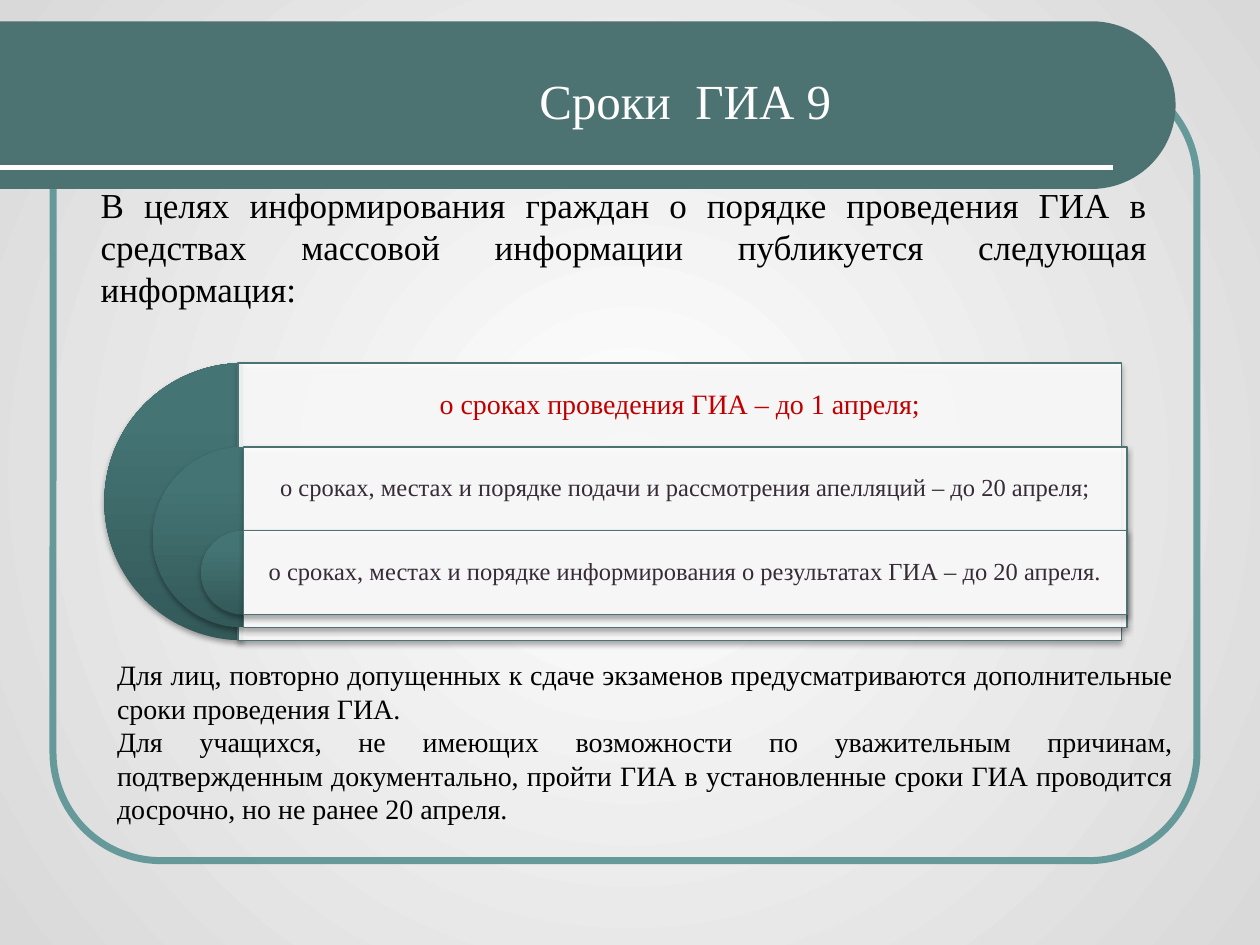
from math import cos, pi, sin

from pptx import Presentation
from pptx.dml.color import RGBColor
from pptx.enum.shapes import MSO_CONNECTOR, MSO_SHAPE
from pptx.enum.text import MSO_ANCHOR, MSO_AUTO_SIZE, PP_ALIGN
from pptx.oxml import parse_xml
from pptx.oxml.ns import nsdecls, qn
from pptx.util import Cm, Pt

CENTER, JUSTIFY, LEFT = PP_ALIGN.CENTER, PP_ALIGN.JUSTIFY, PP_ALIGN.LEFT
TOP, MIDDLE = MSO_ANCHOR.TOP, MSO_ANCHOR.MIDDLE

# Content
TITLE = "Сроки  ГИА 9"
BODY = "."
INTRO = ["В целях информирования граждан о порядке проведения ГИА в "
         "средствах массовой информации публикуется следующая информация:"]
DEADLINES = [  # text, size name, colour name, left edge of the panel in cm
    ("о сроках проведения ГИА – до 1 апреля;", "text", "accent", 4.8),
    ("о сроках, местах и порядке подачи и рассмотрения апелляций – до 20 апреля;",
     "small", "muted", 4.91),
    ("о сроках, местах и порядке информирования о результатах ГИА – до 20 апреля.",
     "small", "muted", 4.91),
]
NOTES = [
    "Для лиц, повторно допущенных к сдаче экзаменов предусматриваются "
    "дополнительные сроки проведения ГИА.",
    "Для учащихся, не имеющих возможности по уважительным причинам, "
    "подтвержденным документально, пройти ГИА в установленные сроки ГИА "
    "проводится досрочно, но не ранее 20 апреля.",
]

THEME = {
    "font": "Times New Roman",
    "sizes": {"title": 28, "intro": 20, "text": 16, "small": 14},
    "colors": {"white": "FFFFFF", "black": "000000", "band": "4C7272",
               "frame": "669999", "accent": "C00000", "muted": "362B36"},
    "background": [(0, "FFFFFF"), (100, "D9D9D9")],
    "pie": [(0, "345959"), (80, "447474"), (100, "447575")],
}


def color(name):
    return RGBColor.from_string(THEME["colors"][name])


def gradient_xml(stops, direction):
    stop_list = "".join(
        f'<a:gs pos="{position * 1000}"><a:srgbClr val="{value}"/></a:gs>'
        for position, value in stops)
    return (f'<a:gradFill {nsdecls("a")} rotWithShape="1">'
            f"<a:gsLst>{stop_list}</a:gsLst>{direction}</a:gradFill>")


def set_effects(shape, effects=""):
    properties = shape.element.spPr
    for old in properties.findall(qn("a:effectLst")):
        properties.remove(old)
    properties.append(parse_xml(
        f'<a:effectLst {nsdecls("a")}>{effects}</a:effectLst>'))


def add_soft_shadow(shape):
    set_effects(shape, '<a:outerShdw blurRad="39400" dist="22900" dir="5400000" '
                       'rotWithShape="0"><a:srgbClr val="000000">'
                       '<a:alpha val="35000"/></a:srgbClr></a:outerShdw>')


def place(shape, left, top, width, height):
    shape.left, shape.top = Cm(left), Cm(top)
    shape.width, shape.height = Cm(width), Cm(height)


def write(shape, texts, size, color_name, alignment, anchor=TOP):
    frame = shape.text_frame
    frame.word_wrap = True
    frame.vertical_anchor = anchor
    for index, text in enumerate(texts):
        paragraph = frame.paragraphs[0] if index == 0 else frame.add_paragraph()
        paragraph.text = text
        paragraph.alignment = alignment
        paragraph.font.name = THEME["font"]
        paragraph.font.size = Pt(THEME["sizes"][size])
        paragraph.font.color.rgb = color(color_name)
    return frame


def add_text(slide, box, *style):
    shape = slide.shapes.add_textbox(*map(Cm, box))
    return write(shape, *style)


def set_background(slide):
    fill = gradient_xml(THEME["background"],
                        '<a:path path="circle"><a:fillToRect l="50000" t="50000" '
                        'r="50000" b="50000"/></a:path>')
    slide.element.find(qn("p:cSld")).insert(0, parse_xml(
        f'<p:bg {nsdecls("p", "a")}><p:bgPr>{fill}<a:effectLst/></p:bgPr></p:bg>'))


def add_decoration(slide):
    # Rounded frame
    frame = slide.shapes.add_shape(
        MSO_SHAPE.ROUNDED_RECTANGLE, Cm(1.07), Cm(1.47), Cm(23.06), Cm(15.88))
    frame.adjustments[0] = 0.137
    frame.fill.background()
    frame.line.color.rgb = color("frame")
    frame.line.width = Pt(4)
    frame.shadow.inherit = False

    # Title band with a semicircular right end
    top, radius, center_x, steps = 0.43, 1.69, 22.01, 48
    angles = [pi * step / steps - pi / 2 for step in range(steps + 1)]
    arc = [(Cm(center_x + radius * cos(angle)),
            Cm(top + radius + radius * sin(angle))) for angle in angles]
    builder = slide.shapes.build_freeform(0, Cm(top))
    builder.add_line_segments(arc + [(0, Cm(top + 2 * radius))], close=True)
    band = builder.convert_to_shape()
    band.fill.solid()
    band.fill.fore_color.rgb = color("band")
    band.line.fill.background()
    band.shadow.inherit = False

    # Rule under the title
    rule = slide.shapes.add_connector(
        MSO_CONNECTOR.STRAIGHT, 0, Cm(3.38), Cm(22.43), Cm(3.38))
    rule.line.color.rgb = color("white")
    rule.line.width = Pt(3)
    set_effects(rule)

    # Decoration lies behind the placeholders
    for shape in (frame, band, rule):
        slide.shapes.title.element.addprevious(shape.element)


def add_deadlines(slide):
    first_top, row_height, center_x, panel_width = 7.32, 1.69, 4.9, 17.81
    for row, (text, size, color_name, left) in enumerate(DEADLINES):
        top = first_top + row * row_height
        diameter = 5.59 - 1.95 * row

        pie = slide.shapes.add_shape(
            MSO_SHAPE.PIE, Cm(center_x - diameter / 2), Cm(top),
            Cm(diameter), Cm(diameter))
        pie.adjustments[0], pie.adjustments[1] = 54, 162
        pie.line.fill.background()
        pie.element.spPr.find(qn("a:prstGeom")).addnext(parse_xml(
            gradient_xml(THEME["pie"], '<a:lin ang="16200000" scaled="0"/>')))
        add_soft_shadow(pie)

        panel = slide.shapes.add_shape(
            MSO_SHAPE.RECTANGLE, Cm(left), Cm(top), Cm(panel_width), Cm(diameter))
        panel.fill.solid()
        panel.fill.fore_color.rgb = color("white")
        panel.element.spPr.find(qn("a:solidFill"))[0].append(
            parse_xml(f'<a:alpha {nsdecls("a")} val="90000"/>'))
        panel.line.color.rgb = color("band")
        panel.line.width = Pt(0.75)
        add_soft_shadow(panel)

        frame = add_text(slide, (left, top, panel_width, row_height),
                         [text], size, color_name, CENTER, MIDDLE)
        frame.margin_left = frame.margin_right = Cm(0.15)
        frame.margin_top = frame.margin_bottom = Cm(0.15)
        frame.paragraphs[0].line_spacing = 0.9


def main():
    presentation = Presentation()
    presentation.slide_width, presentation.slide_height = Cm(25.4), Cm(19.05)
    slide = presentation.slides.add_slide(presentation.slide_layouts[1])
    set_background(slide)
    add_decoration(slide)

    # Title and body placeholders
    title, body = slide.shapes.title, slide.placeholders[1]
    place(title, 4.09, 0.74, 19.2, 2.54)
    write(title, [TITLE], "title", "white", CENTER, MIDDLE).margin_left = Cm(0.5)
    place(body, 1.9, 4.72, 22.02, 10.67)
    frame = write(body, [BODY], "small", "black", LEFT)
    frame.margin_top = Cm(0.8)
    properties = frame.paragraphs[0]._p.get_or_add_pPr()
    properties.set("marL", "0")
    properties.set("indent", "0")
    properties.insert_element_before(
        parse_xml(f'<a:buNone {nsdecls("a")}/>'), "a:tabLst", "a:defRPr", "a:extLst")

    # Deadlines and surrounding text
    add_deadlines(slide)
    for box, texts, size in (((1.78, 3.58, 21.59, 2.82), INTRO, "intro"),
                             ((2.11, 13.13, 21.79, 3.68), NOTES, "text")):
        frame = add_text(slide, box, texts, size, "black", JUSTIFY)
        frame.auto_size = MSO_AUTO_SIZE.SHAPE_TO_FIT_TEXT

    presentation.save("out.pptx")


if __name__ == "__main__":
    main()
